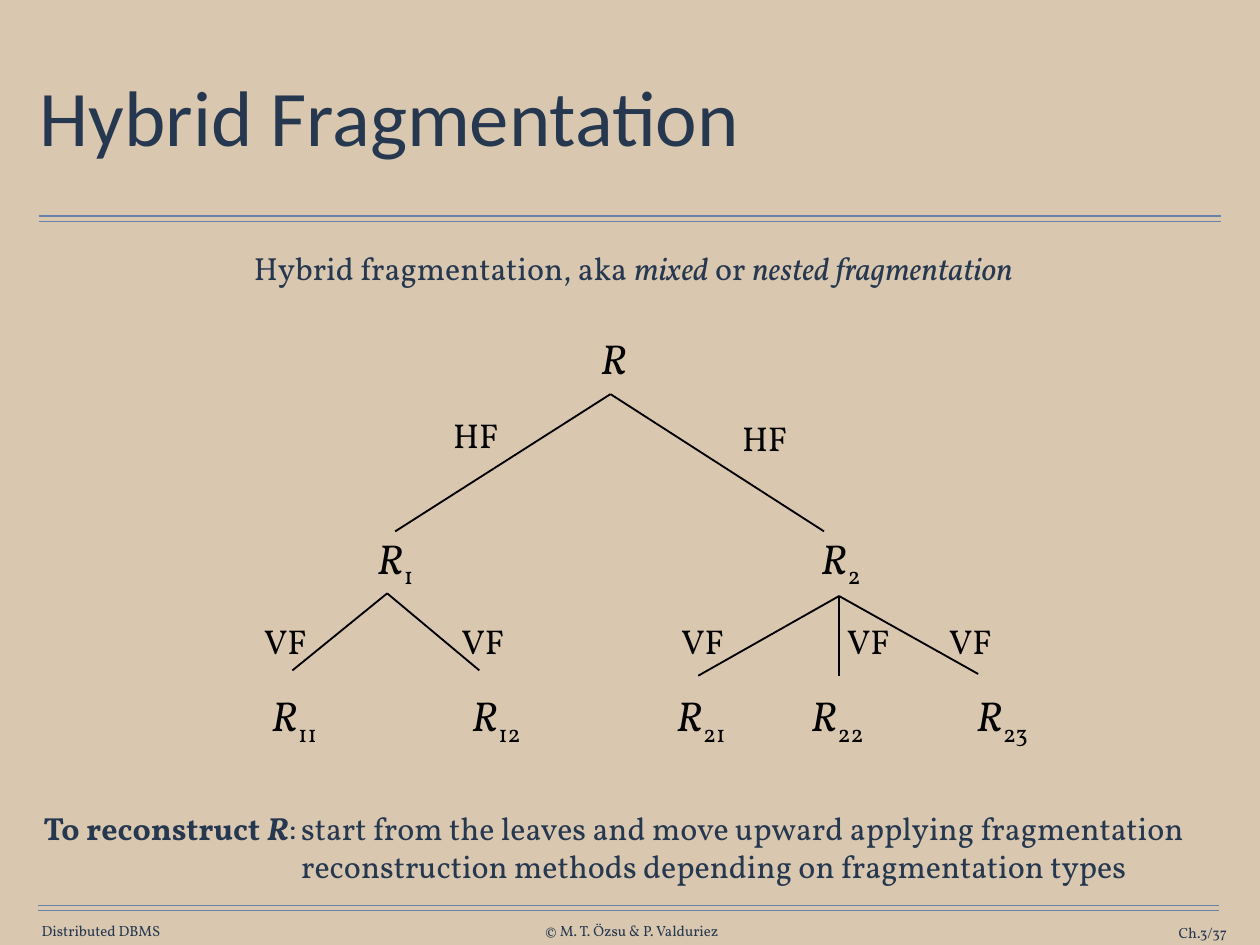
"""Builds the slide on hybrid fragmentation."""
from lxml import etree
from pptx import Presentation
from pptx.dml.color import RGBColor
from pptx.enum import shapes, text
from pptx.oxml import ns
from pptx.util import Inches, Pt

SAND = RGBColor(0xD9, 0xC8, 0xAF)
NAVY = RGBColor(0x26, 0x37, 0x50)
BLUE = RGBColor(0x66, 0x82, 0xAA)
BLACK = RGBColor(0, 0, 0)
LEFT, MID, RIGHT = text.PP_ALIGN.LEFT, text.PP_ALIGN.CENTER, text.PP_ALIGN.RIGHT

NODES = [
    (4.13, 0, ""),
    (1.66, 2.25, "1"), (6.69, 2.25, "2"),
    (0.52, 4.03, "11"), (2.8, 4.03, "12"),
    (5.11, 4.03, "21"), (6.65, 4.03, "22"), (8.51, 4.03, "23"),
]
MARKS = [
    (2.57, 0.92, "HF"), (5.83, 0.95, "HF"),
    (0.42, 3.24, "VF"), (2.65, 3.24, "VF"),
    (5.13, 3.24, "VF"), (7.0, 3.24, "VF"), (8.15, 3.24, "VF"),
]
FANS = [
    (4.09, 0.76, [(1.66, 2.31), (6.5, 2.31)]),
    (1.57, 3.01, [(0.5, 3.88), (2.61, 3.88)]),
    (6.67, 3.04, [(5.08, 3.94), (6.67, 3.94), (8.24, 3.92)]),
]


def write(slide, box, runs, size, color=NAVY, align=MID, pad=(0.1, 0.05),
          face="Vollkorn", middle=False, wrap=True):
    """Add a text box; each run is (words, styles), with b, i or s for sub."""
    frame = slide.shapes.add_textbox(*map(Inches, box)).text_frame
    frame.word_wrap = wrap
    frame.margin_left = frame.margin_right = Inches(pad[0])
    frame.margin_top = frame.margin_bottom = Inches(pad[1])
    frame.vertical_anchor = text.MSO_ANCHOR.MIDDLE if middle else text.MSO_ANCHOR.TOP
    para = frame.paragraphs[0]
    para.alignment = align
    for words, style in runs:
        run = para.add_run()
        run.text = words
        font = run.font
        font.name, font.size = face, Pt(size)
        font.color.rgb = color
        font.bold, font.italic = "b" in style, "i" in style
        if "s" in style:
            run._r.get_or_add_rPr().set("baseline", "-25000")
    return para


def rule(slide, start, end, color, width):
    """Draw a straight line without a shadow."""
    line = slide.shapes.add_connector(
        shapes.MSO_CONNECTOR.STRAIGHT, *map(Inches, start + end))
    line.line.color.rgb = color
    line.line.width = Pt(width)
    etree.SubElement(line._element.spPr, ns.qn("a:effectLst"))


def pair(slide, x, y, w):
    """Draw a double rule."""
    for top in (y, y + 0.06):
        rule(slide, (x, top), (x + w, top), BLUE, 1)


def head(slide, x, y, w, h):
    """Place the title and the double rule under it."""
    para = write(slide, (x, y, w, h), [("Hybrid Fragmentation", "")], 64,
                 align=LEFT, pad=(0.06, 0.06), face="Calibri", middle=True)
    para.line_spacing = 0.9
    pair(slide, x + 0.05, y + 1.95, w - 0.1)


def tree(slide, x, y):
    """Place the fragment tree: nodes, branches and branch labels."""
    for left, top, ends in FANS:
        for end in ends:
            rule(slide, (x + left, y + top), (x + end[0], y + end[1]), BLACK, 1.5)
    items = [(left, top, [("R", "i")] + ([(sub, "s")] if sub else []), 34, 0.71)
             for left, top, sub in NODES]
    items += [(left, top, [(mark, "")], 28, 0.61) for left, top, mark in MARKS]
    for left, top, runs, size, tall in items:
        write(slide, (x + left - 0.5, y + top, 1, tall), runs, size, BLACK,
              pad=(0.14, 0.07), wrap=False)


def notes(slide, x, y, w):
    """Place the sentence on reconstruction with its lead words."""
    write(slide, (x, y, 3.23, 0.54),
          [("To reconstruct ", "b"), ("R", "bi"), (":", "")], 26,
          align=LEFT, wrap=False)
    write(slide, (x + 2.91, y, w - 2.91, 0.98),
          [("start from the leaves and move upward applying fragmentation "
            "reconstruction methods depending on fragmentation types", "")],
          26, align=LEFT)


def foot(slide, x, y, w):
    """Place the lower double rule and the three footer texts."""
    pair(slide, x, y, w)
    for left, top, wide, words, align in (
            (0.04, 0.19, 1.38, "Distributed DBMS", LEFT),
            (5.66, 0.19, 2.08, "© M. T. Özsu & P. Valduriez", MID),
            (11.88, 0.21, 1.54, "Ch.3/37", RIGHT)):
        write(slide, (x + left, y + top, wide, 0.2), [(words, "")], 12,
              align=align, pad=(0, 0), middle=True, wrap=align == RIGHT)


def main():
    """Build and save the slide."""
    deck = Presentation()
    deck.slide_width, deck.slide_height = Inches(14.22), Inches(10.67)
    slide = deck.slides.add_slide(deck.slide_layouts[6])
    fill = slide.background.fill
    fill.solid()
    fill.fore_color.rgb = SAND
    head(slide, 0.39, 0.49, 13.44, 1.76)
    write(slide, (0.55, 2.76, 13.2, 0.54),
          [("Hybrid fragmentation, aka ", ""), ("mixed", "i"), (" or ", ""),
           ("nested fragmentation", "i")], 26)
    tree(slide, 2.8, 3.69)
    notes(slide, 0.39, 9.08, 13.46)
    foot(slide, 0.43, 10.22, 13.33)
    deck.save("out.pptx")


if __name__ == "__main__":
    main()
